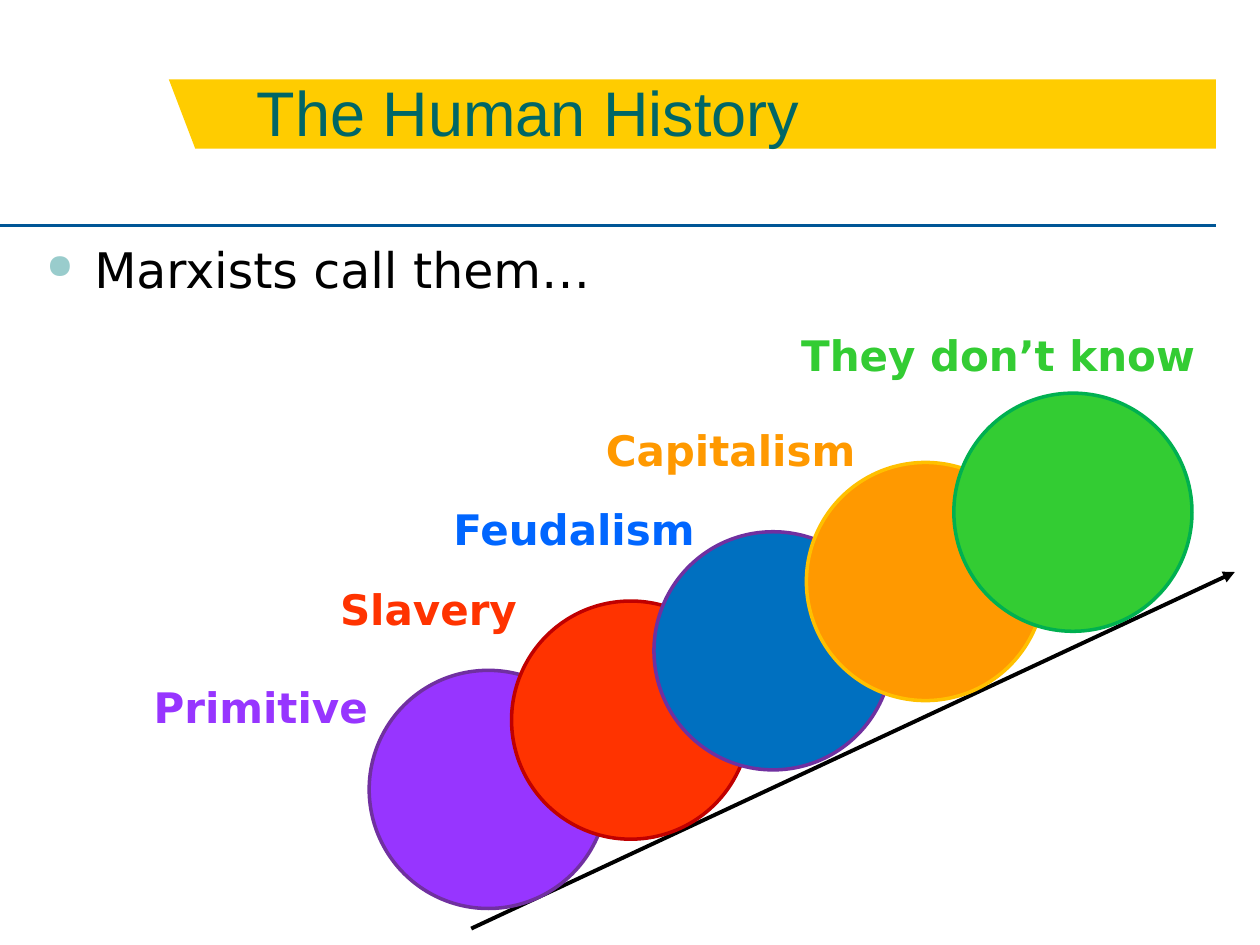
from lxml import etree
from pptx import Presentation
from pptx.dml.color import RGBColor
from pptx.enum import shapes, text
from pptx.oxml import ns
from pptx.util import Inches, Pt

BODY_FONT = "DejaVu Sans"
DIAMETER = 1.89
RISE = 0.55  # height gained from one stage to the next

# name, fill, outline, label colour, circle left, label (left, top, width)
STAGES = [
    ("Primitive", "9735FF", "7030A0", "9735FF", 2.93, (1.12, 5.36, 1.91)),
    ("Slavery", "FF3300", "C00000", "FF3300", 4.06, (2.6, 4.58, 1.61)),
    ("Feudalism", "0070C0", "7030A0", "0066FF", 5.19, (3.5, 3.95, 2.13)),
    ("Capitalism", "FF9900", "FFC000", "FF9900", 6.4, (4.71, 3.32, 2.18)),
    ("They don’t know", "33CC33", "00B050", "33CC33", 7.57, (6.26, 2.57, 3.35)),
]


def color(hex_code):
    return RGBColor.from_string(hex_code)


def add_child(parent, tag, **attributes):
    return etree.SubElement(parent, ns.qn(tag), **attributes)


def paint(shape, fill, outline=None):
    shape.shadow.inherit = False
    shape.fill.solid()
    shape.fill.fore_color.rgb = color(fill)
    if outline:
        shape.line.color.rgb = color(outline)
        shape.line.width = Pt(2)
    else:
        shape.line.fill.background()


def add_line(slide, start, end, hex_code, arrow=False):
    line = slide.shapes.add_connector(
        shapes.MSO_CONNECTOR.STRAIGHT, *map(Inches, start + end))
    line.line.color.rgb = color(hex_code)
    line.line.width = Pt(2.25)
    if arrow:
        add_child(line.line._get_or_add_ln(), "a:tailEnd", type="triangle")
    add_child(line._element.spPr, "a:effectLst")


def add_text(slide, box, words, size, font, hex_code, bold=False, wrap=True):
    """Add a one-paragraph text box and return its text frame."""
    frame = slide.shapes.add_textbox(*map(Inches, box)).text_frame
    frame.word_wrap = wrap
    run = frame.paragraphs[0].add_run()
    run.text = words
    run.font.size = Pt(size)
    run.font.name = font
    run.font.bold = bold
    run.font.color.rgb = color(hex_code)
    return frame


def add_banner(slide, left, top, width, height):
    """Draw the yellow band with its slanted left end, and the title on it."""
    slant_width, foot = 0.43, 0.21
    bar_left = left + slant_width
    outline = slide.shapes.build_freeform(Inches(left), Inches(top), scale=1.0)
    outline.add_line_segments([
        (Inches(x), Inches(y)) for x, y in (
            (bar_left, top), (bar_left, top + height), (left + foot, top + height))
    ])
    paint(outline.convert_to_shape(), "FFCC00")
    bar = slide.shapes.add_shape(
        shapes.MSO_SHAPE.RECTANGLE, Inches(bar_left), Inches(top),
        Inches(width - slant_width), Inches(height))
    paint(bar, "FFCC00")
    title = add_text(slide, (1.94, top - 0.3, 7.56, 0.9),
                     "The Human History", 36, "Arial", "006666")
    title.vertical_anchor = text.MSO_ANCHOR.BOTTOM


def add_bullet(slide, box, words):
    frame = add_text(slide, box, words, 28, BODY_FONT, "000000")
    indent = Inches(0.38)
    properties = frame.paragraphs[0]._p.get_or_add_pPr()
    properties.set("marL", str(indent))
    properties.set("indent", str(-indent))
    add_child(add_child(properties, "a:buClr"), "a:srgbClr", val="99CCCC")
    add_child(properties, "a:buSzPct", val="70000")
    add_child(properties, "a:buChar", char="●")


def add_stages(slide, first_top):
    """Draw the rising circles, then their labels in front."""
    for step, (_, fill, outline, _, left, _) in enumerate(STAGES):
        circle = slide.shapes.add_shape(
            shapes.MSO_SHAPE.OVAL, Inches(left), Inches(first_top - step * RISE),
            Inches(DIAMETER), Inches(DIAMETER))
        paint(circle, fill, outline)
    for name, _, _, label_color, _, (left, top, width) in STAGES:
        label = add_text(slide, (left, top, width, 0.5), name, 24, BODY_FONT,
                         label_color, bold=True, wrap=False)
        label.auto_size = text.MSO_AUTO_SIZE.SHAPE_TO_FIT_TEXT


def main():
    deck = Presentation()
    deck.slide_width, deck.slide_height = Inches(10), Inches(7.5)
    slide = deck.slides.add_slide(deck.slide_layouts[6])
    add_line(slide, (0, 1.79), (9.65, 1.79), "005696")
    add_banner(slide, 1.34, 0.63, 8.31, 0.55)
    add_bullet(slide, (0.27, 1.85, 9.37, 0.8), "Marxists call them…")
    add_line(slide, (3.74, 7.37), (9.8, 4.54), "000000", arrow=True)
    add_stages(slide, 5.32)
    deck.save("out.pptx")


if __name__ == "__main__":
    main()
